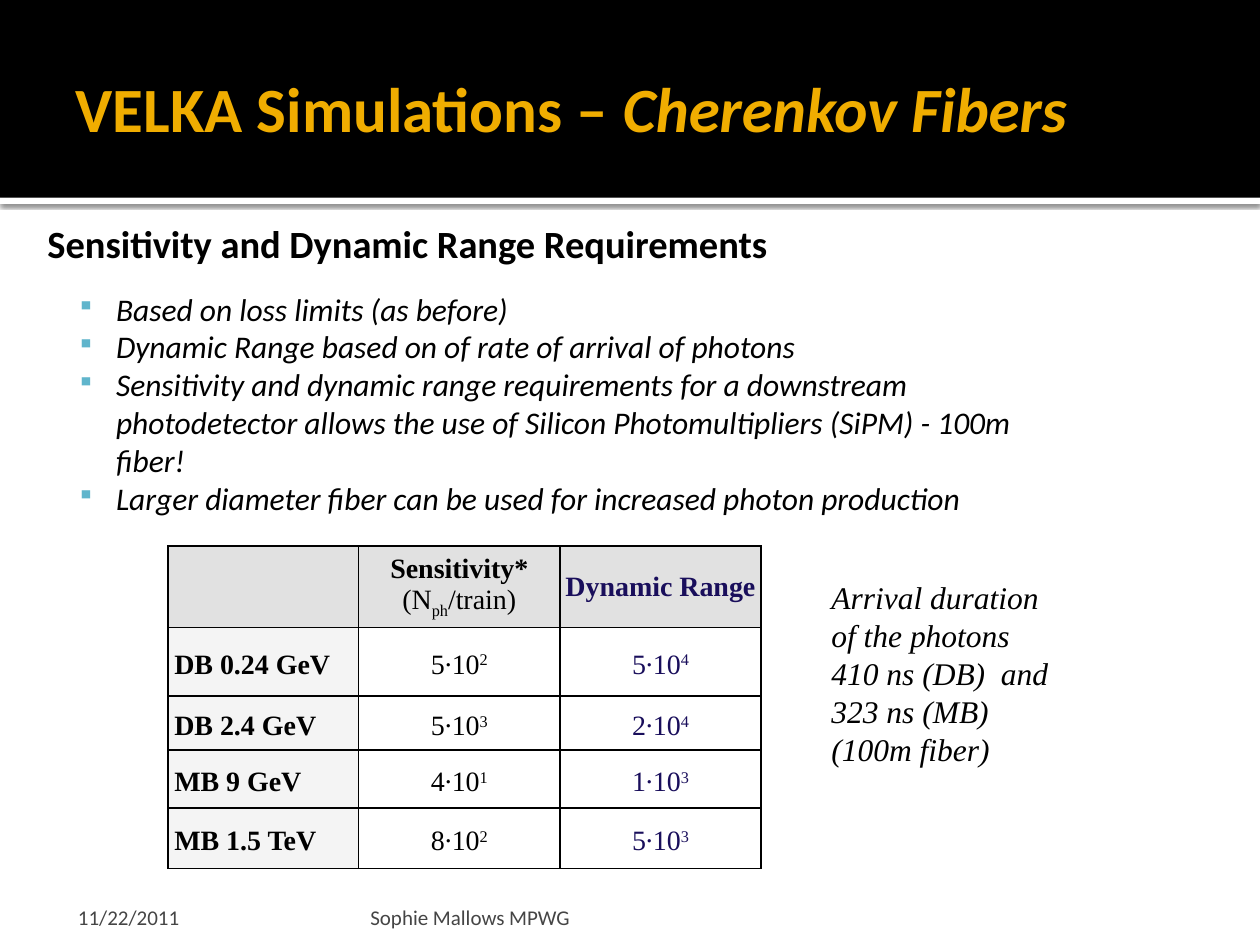
from lxml.etree import SubElement
from pptx import Presentation
from pptx.dml.color import RGBColor
from pptx.enum.shapes import MSO_SHAPE as SHAPE
from pptx.enum.text import MSO_ANCHOR as ANCHOR, PP_ALIGN as ALIGN
from pptx.oxml import parse_xml
from pptx.oxml.ns import nsdecls, qn
from pptx.util import Pt


def rgb(color):
    return RGBColor.from_string(color)


def add_text(p, runs, size, color, font="Calibri", bold=False, italic=False):
    """Fill a paragraph with (text, baseline percent) runs in one format."""
    f = p.font
    f.name, f.size, f.bold, f.italic = font, Pt(size), bold, italic
    f.color.rgb = rgb(color)
    for text, baseline in runs:
        r = p.add_run()
        r.text = text
        if baseline:
            r.font._element.set("baseline", str(baseline * 1000))


prs = Presentation()
prs.slide_width, prs.slide_height = Pt(720), Pt(540)
s = prs.slides.add_slide(prs.slide_layouts[5])
title = s.shapes.title

# Black header band, with a white strip and its shadow below
for top, height, color in [(0, 113, "000000"), (113, 3.6, "FFFFFF")]:
    band = s.shapes.add_shape(SHAPE.RECTANGLE, 0, Pt(top), Pt(720), Pt(height))
    band.shadow.inherit = False
    band.fill.solid()
    band.fill.fore_color.rgb = rgb(color)
    band.line.fill.background()
    s.shapes._spTree.insert(2, band._element)  # behind the title
    strip = band
strip._element.spPr.find(qn("a:effectLst")).append(parse_xml(
    f'<a:outerShdw {nsdecls("a")} blurRad="{Pt(2.5)}" dist="{Pt(0.8)}" dir="5400000" '
    'algn="tl" rotWithShape="0"><a:srgbClr val="000000"><a:alpha val="60000"/>'
    '</a:srgbClr></a:outerShdw>'))

title.left, title.top, title.width, title.height = Pt(36), Pt(12), Pt(648), Pt(99)
tf = title.text_frame
tf.vertical_anchor = ANCHOR.MIDDLE
tf.margin_left, tf.margin_right = Pt(7.2), Pt(3.6)
p = tf.paragraphs[0]
p.alignment = ALIGN.LEFT
add_text(p, [("VELKA Simulations – ", 0), ("Cherenkov Fibers", 0)], 36, "F0AD00", bold=True)
p.runs[1].font.italic = True

# Subheading and the remark beside the table
notes = [
    ("Sensitivity and Dynamic Range Requirements", (20, 122.4, 646.6, 34),
     dict(size=22, bold=True)),
    ("Arrival duration of the photons 410 ns (DB)  and 323 ns (MB) (100m fiber)",
     (468, 327, 147.6, 142), dict(size=18, font="Times New Roman", italic=True)),
]
for text, box, style in notes:
    tf = s.shapes.add_textbox(*map(Pt, box)).text_frame
    tf.word_wrap = True
    add_text(tf.paragraphs[0], [(text, 0)], color="000000", **style)

# Bullets
bullets = [
    "Based on loss limits (as before)",
    "Dynamic Range based on of rate of arrival of photons",
    "Sensitivity and dynamic range requirements for a downstream "
    "photodetector allows the use of Silicon Photomultipliers (SiPM) - 100m fiber!",
    "Larger diameter fiber can be used for increased photon production",
]
tf = s.shapes.add_textbox(Pt(36.7), Pt(162), Pt(572.4), Pt(138)).text_frame
tf.word_wrap = True
for i, text in enumerate(bullets):
    p = tf.add_paragraph() if i else tf.paragraphs[0]
    add_text(p, [(text, 0)], 18, "000000", italic=True)
    pPr = p._p.get_or_add_pPr()
    pPr.set("marL", str(Pt(22.5)))
    pPr.set("indent", str(-Pt(22.5)))
    for place, tag in enumerate([
            f'<a:buClr {nsdecls("a")}><a:srgbClr val="60B5CC"/></a:buClr>',
            f'<a:buSzPct {nsdecls("a")} val="80000"/>',
            f'<a:buChar {nsdecls("a")} char="▪"/>']):
        pPr.insert(place, parse_xml(tag))

# Table: each row is a beam, then (factor, exponent) for sensitivity and range
beams = [
    ("DB 0.24 GeV", (5, 2), (5, 4)),
    ("DB 2.4 GeV", (5, 3), (2, 4)),
    ("MB 9 GeV", (4, 1), (1, 3)),
    ("MB 1.5 TeV", (8, 2), (5, 3)),
]
col_widths = [108.9, 115.2, 114.7]
row_heights = [46.6, 39, 31.1, 33.1, 34.5]
table = s.shapes.add_table(5, 3, Pt(96), Pt(312), Pt(sum(col_widths)),
                           Pt(sum(row_heights))).table
table.first_row = table.horz_banding = False
for column, width in zip(table.columns, col_widths):
    column.width = Pt(width)
for row, height in zip(table.rows, row_heights):
    row.height = Pt(height)

serif = dict(size=16, font="Times New Roman")
inks = ["000000", "000000", "190E5B"]
tf = table.cell(0, 1).text_frame
add_text(tf.paragraphs[0], [("Sensitivity*", 0)], color=inks[1], bold=True, **serif)
add_text(tf.add_paragraph(), [("(N", 0), ("ph", -25), ("/train)", 0)], color=inks[1], **serif)
add_text(table.cell(0, 2).text_frame.paragraphs[0], [("Dynamic Range", 0)],
         color=inks[2], bold=True, **serif)
for i, (beam, *values) in enumerate(beams, 1):
    p = table.cell(i, 0).text_frame.paragraphs[0]
    add_text(p, [(beam, 0)], color=inks[0], bold=True, **serif)
    p._p.get_or_add_pPr().set("marL", str(Pt(3.6)))
    for j, (factor, exponent) in enumerate(values, 1):
        add_text(table.cell(i, j).text_frame.paragraphs[0],
                 [(f"{factor}∙10", 0), (str(exponent), 30)], color=inks[j], **serif)

for i in range(5):
    for j in range(3):
        cell = table.cell(i, j)
        cell.vertical_anchor = ANCHOR.MIDDLE
        cell.margin_left = cell.margin_right = 0
        cell.margin_top = cell.margin_bottom = Pt(3.6 if i else 2.8)
        for p in cell.text_frame.paragraphs:
            p.alignment = ALIGN.CENTER if i == 0 or j else ALIGN.LEFT
            p.line_spacing = 1.2 if i else 1.0
        tcPr = cell._tc.get_or_add_tcPr()
        for side in ("lnL", "lnR", "lnT", "lnB"):
            ln = SubElement(tcPr, qn(f"a:{side}"), w=str(Pt(1)))
            SubElement(SubElement(ln, qn("a:solidFill")), qn("a:srgbClr"), val="000000")
        if i == 0 or j == 0:
            cell.fill.solid()
            cell.fill.fore_color.rgb = rgb("F4F4F4" if i else "E1E1E1")
        else:
            cell.fill.background()

# Date and footer
for text, left, width, inset in [("11/22/2011", 36, 167.8, 8.6),
                                 ("Sophie Mallows MPWG", 208, 433.4, 3.6)]:
    tf = s.shapes.add_textbox(Pt(left), Pt(509.8), Pt(width), Pt(21.6)).text_frame
    tf.word_wrap = True
    tf.vertical_anchor = ANCHOR.BOTTOM
    tf.margin_left, tf.margin_right, tf.margin_bottom = Pt(inset), Pt(3.6), 0
    add_text(tf.paragraphs[0], [(text, 0)], 12, "454545")

prs.save("out.pptx")
